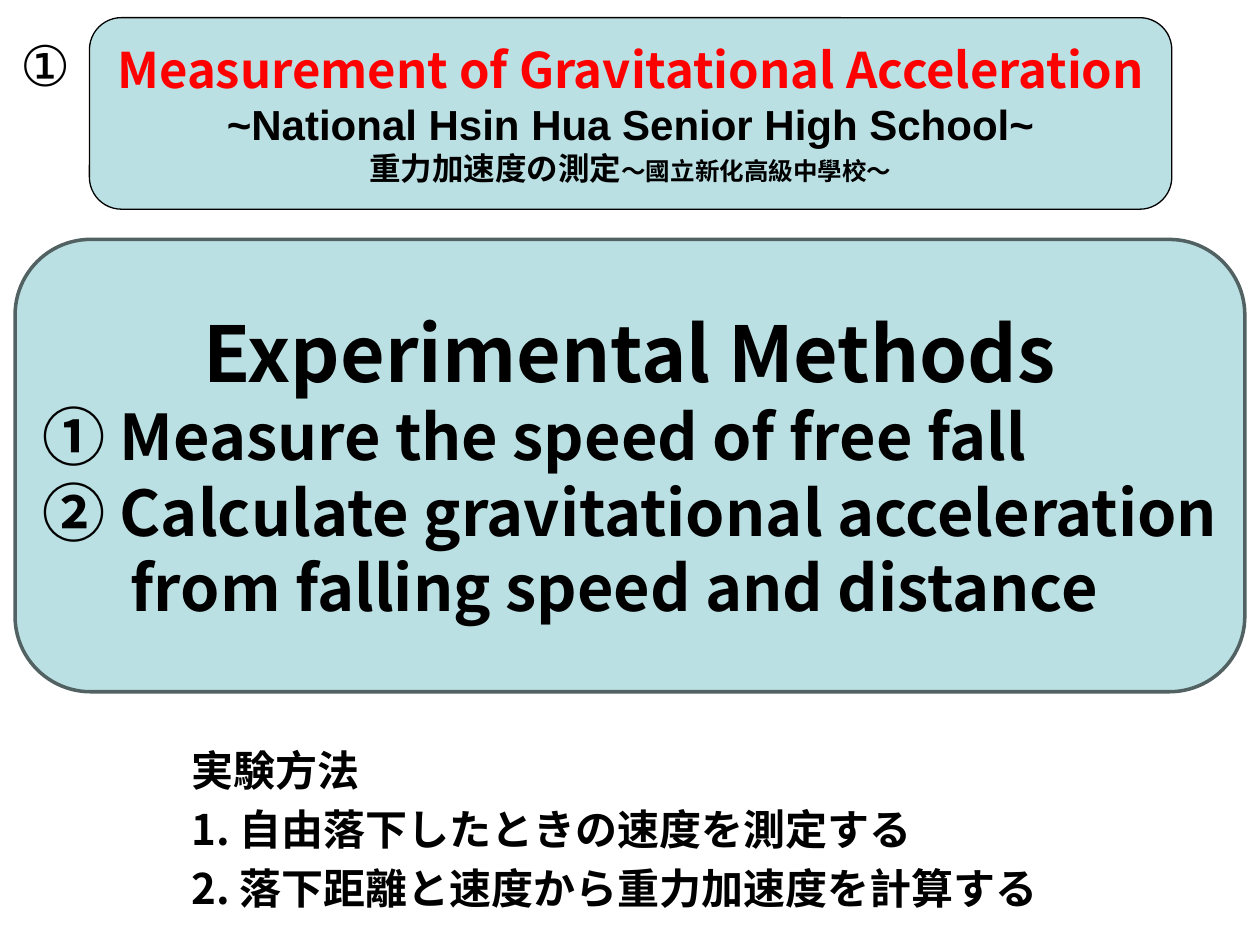
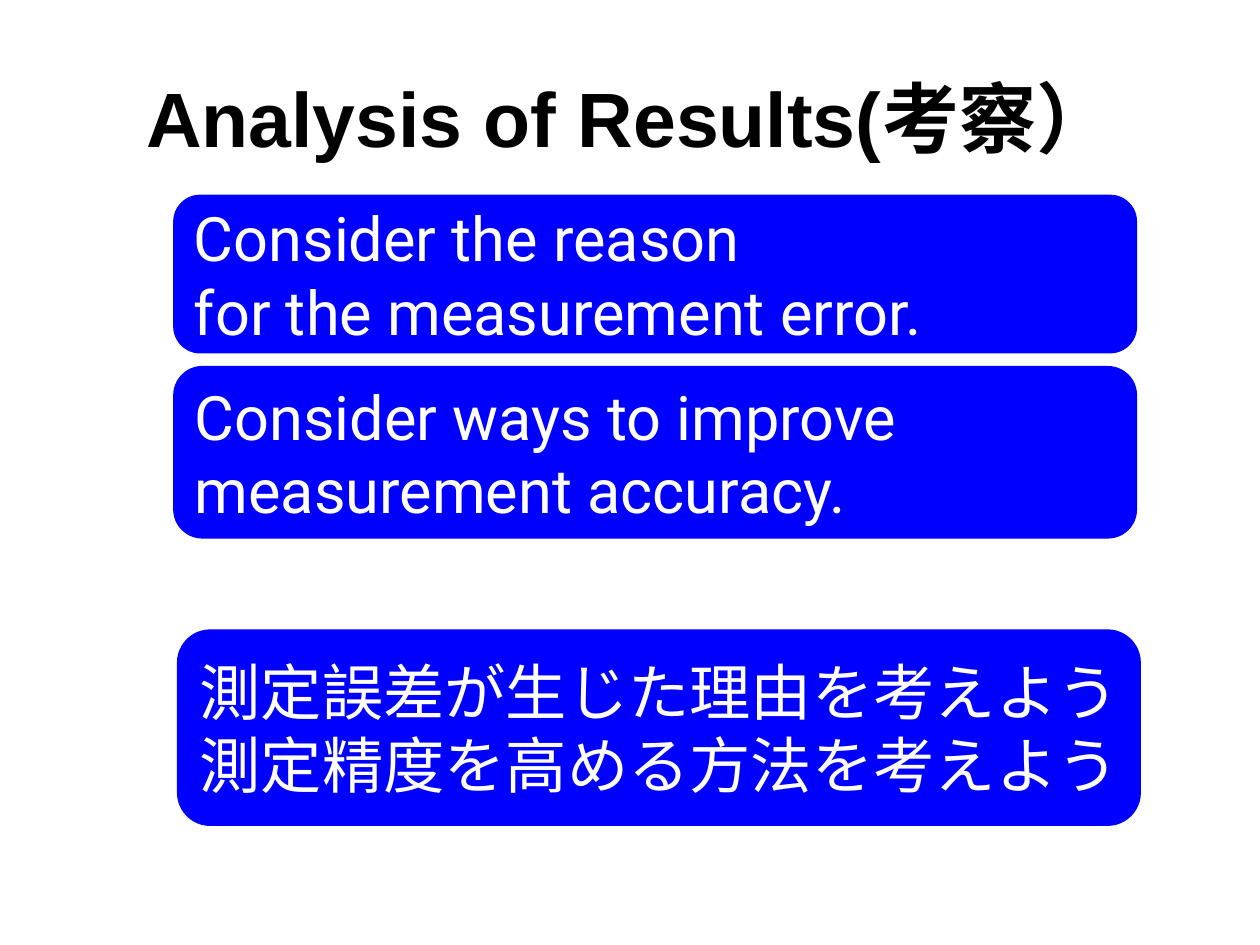
from dataclasses import dataclass

from lxml import etree
from pptx import Presentation
from pptx.dml.color import RGBColor
from pptx.enum.shapes import MSO_SHAPE
from pptx.enum.text import MSO_ANCHOR, PP_ALIGN
from pptx.oxml.ns import qn
from pptx.util import Inches, Pt

ROUNDED = MSO_SHAPE.ROUNDED_RECTANGLE
MIDDLE, TOP = MSO_ANCHOR.MIDDLE, MSO_ANCHOR.TOP
CENTER, LEFT = PP_ALIGN.CENTER, PP_ALIGN.LEFT
TITLE_ONLY, BLANK = 5, 6


@dataclass(frozen=True)
class Theme:
    black: str = "000000"
    white: str = "FFFFFF"
    red: str = "FF0000"
    blue: str = "0000FF"
    pale: str = "BBE0E3"
    edge: str = "526263"
    arial: str = "Arial"
    noto: str = "Noto Sans CJK JP"
    roboto: str = "Roboto"
    title: int = 44
    steps: int = 36
    prompt: int = 35
    number: int = 32
    heading: int = 28
    text: int = 24
    small: int = 18
    tiny: int = 14


def color(code):
    return RGBColor.from_string(code)


def write_span(para, text, size, font, ink, bold):
    span = para.add_run()
    span.text = text
    span.font.size = Pt(size)
    span.font.bold = bold
    span.font.color.rgb = color(ink)
    span.font.name = font
    # East Asian glyphs need their own typeface entry
    east_asian = etree.SubElement(span.font._element, qn("a:ea"))
    east_asian.set("typeface", Theme.noto)


def write(frame, text, size=Theme.text, font=Theme.noto, ink=Theme.black,
          bold=False, align=LEFT, gap=0.0, indent=0.0, tail="", tail_size=0):
    """Add one paragraph; gap is a share of the type size, tail a second span."""
    para = frame.paragraphs[0]
    if para.runs:
        para = frame.add_paragraph()
        para.space_before = Pt(size * gap)
    para.alignment = align
    if indent:
        properties = para._p.get_or_add_pPr()
        properties.set("marL", str(Inches(indent)))
        properties.set("indent", "0")
    write_span(para, text, size, font, ink, bold)
    if tail:
        write_span(para, tail, tail_size, font, ink, bold)


class Deck:
    def __init__(self, theme):
        self.theme = theme
        self.file = Presentation()
        self.file.slide_width = Inches(10)
        self.file.slide_height = Inches(7.5)
        self.page = None

    def add_page(self, layout):
        self.page = self.file.slides.add_slide(self.file.slide_layouts[layout])

    def title(self, text):
        box = self.page.shapes.title
        box.left, box.top, box.width, box.height = map(Inches, (0.5, 0.3, 9, 1.25))
        box.text_frame.vertical_anchor = MIDDLE
        write(box.text_frame, text, size=self.theme.title, font=self.theme.arial,
              bold=True, align=CENTER)

    def panel(self, left, top, width, height, fill, line, weight=0.75, wrap=False):
        box = self.page.shapes.add_shape(
            ROUNDED, Inches(left), Inches(top), Inches(width), Inches(height))
        box.shadow.inherit = False
        box.adjustments[0] = 0.167
        box.fill.solid()
        box.fill.fore_color.rgb = color(fill)
        box.line.color.rgb = color(line)
        box.line.width = Pt(weight)
        box.text_frame.vertical_anchor = MIDDLE
        box.text_frame.word_wrap = wrap
        return box.text_frame

    def text_box(self, left, top, width, height):
        box = self.page.shapes.add_textbox(
            Inches(left), Inches(top), Inches(width), Inches(height))
        box.text_frame.word_wrap = True
        box.text_frame.vertical_anchor = TOP
        return box.text_frame

    def prompt(self, left, top, height, lines, font):
        frame = self.panel(left, top, 7.64, height, self.theme.blue, self.theme.blue)
        for line in lines:
            write(frame, line, size=self.theme.prompt, font=font, ink=self.theme.white)


def build_methods(deck):
    theme = deck.theme
    deck.add_page(BLANK)

    header = deck.panel(0.71, 0.14, 8.59, 1.52, theme.pale, theme.black)
    write(header, "Measurement of Gravitational Acceleration", size=theme.heading,
          ink=theme.red, bold=True, align=CENTER)
    write(header, "~National Hsin Hua Senior High School~", font=theme.arial,
          bold=True, align=CENTER)
    write(header, "重力加速度の測定", size=theme.small, font=theme.arial, bold=True,
          align=CENTER, tail="～國立新化高級中學校～", tail_size=theme.tiny)

    number = deck.text_box(0, 0.19, 0.72, 0.71)
    write(number, "①", size=theme.number, font=theme.arial, align=CENTER)

    japanese = deck.text_box(1.42, 5.86, 7.17, 1.51)
    for line in ("実験方法", "1. 自由落下したときの速度を測定する",
                 "2. 落下距離と速度から重力加速度を計算する"):
        write(japanese, line, bold=True, gap=0.2)

    methods = deck.panel(0.12, 1.9, 9.76, 3.59, theme.pale, theme.edge,
                         weight=2, wrap=True)
    methods.margin_left = methods.margin_right = methods.margin_top = Inches(0.04)
    methods.margin_bottom = Inches(0.05)
    write(methods, "Experimental Methods", size=theme.title, bold=True, align=CENTER)
    for line, indent in (("① Measure the speed of free fall", 0),
                         ("② Calculate gravitational acceleration", 0),
                         ("from falling speed and distance", 0.7)):
        write(methods, line, size=theme.steps, bold=True, indent=indent)


def build_analysis(deck):
    theme = deck.theme
    deck.add_page(TITLE_ONLY)
    deck.title("Analysis of Results(考察）")
    deck.prompt(1.38, 1.55, 1.25,
                ("Consider the reason", "for the measurement error."), theme.roboto)
    deck.prompt(1.38, 2.91, 1.36,
                ("Consider ways to improve", "measurement accuracy."), theme.roboto)
    deck.prompt(1.41, 5, 1.55,
                ("測定誤差が生じた理由を考えよう", "測定精度を高める方法を考えよう"),
                theme.arial)


def main():
    deck = Deck(Theme())
    build_methods(deck)
    build_analysis(deck)
    deck.file.save("out.pptx")


if __name__ == "__main__":
    main()
